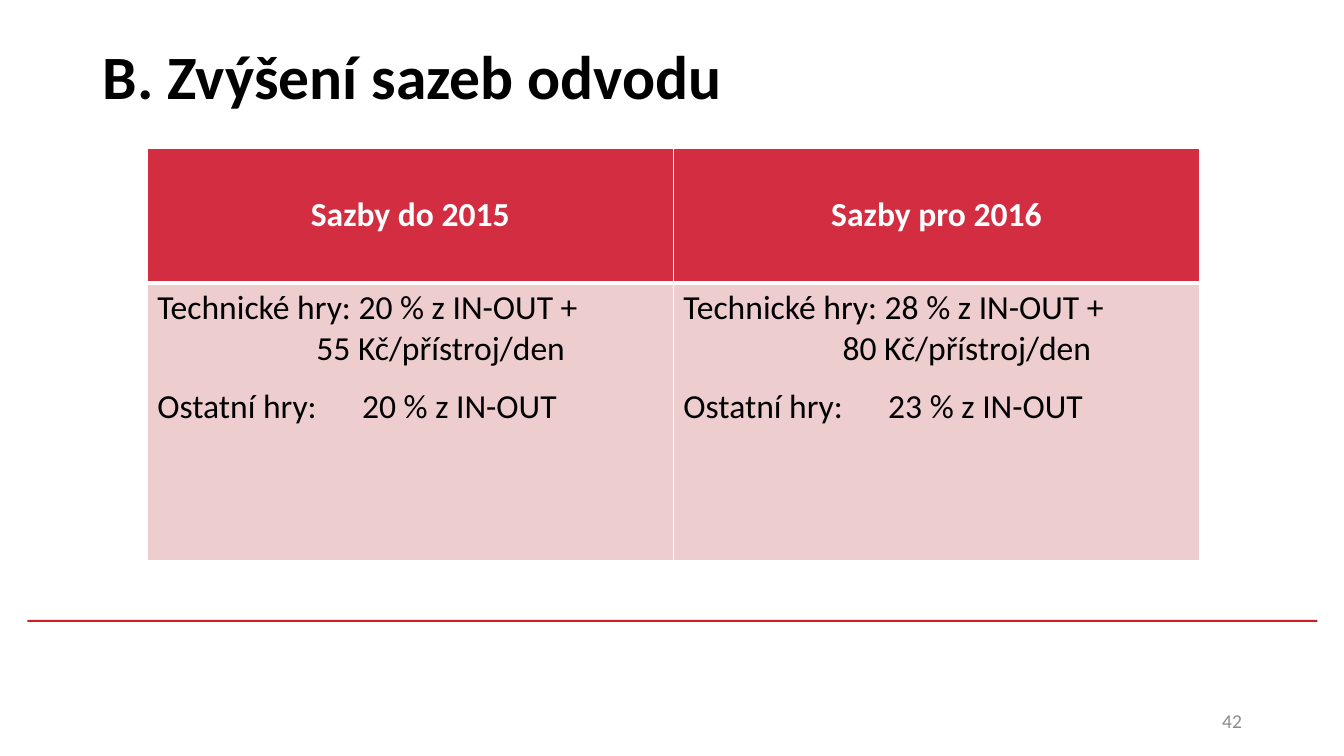
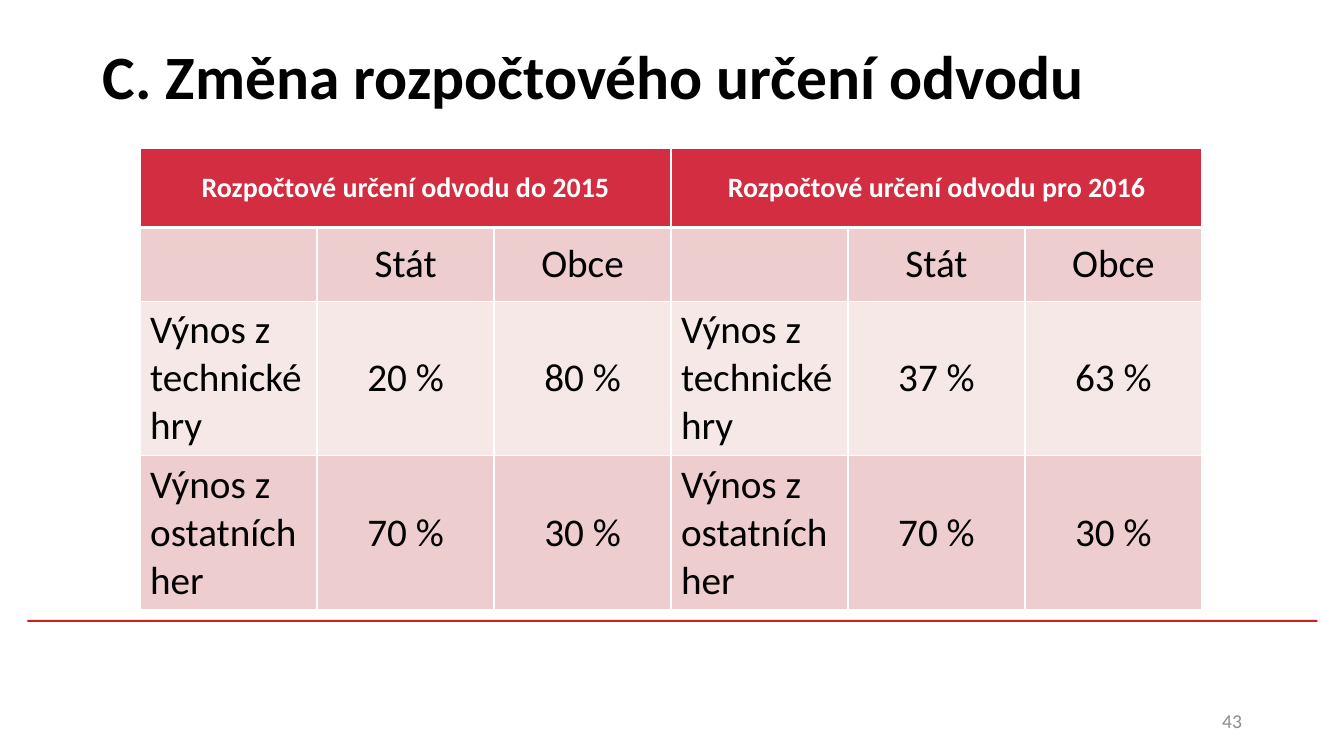
from dataclasses import dataclass

from lxml import etree
from pptx import Presentation
from pptx.dml.color import RGBColor
from pptx.enum.shapes import MSO_SHAPE
from pptx.enum.text import MSO_ANCHOR, PP_ALIGN
from pptx.oxml.ns import qn
from pptx.util import Cm, Pt

RECT = MSO_SHAPE.RECTANGLE
TOP, MIDDLE = MSO_ANCHOR.TOP, MSO_ANCHOR.MIDDLE
LEFT, CENTER, RIGHT = PP_ALIGN.LEFT, PP_ALIGN.CENTER, PP_ALIGN.RIGHT


@dataclass(frozen=True)
class Theme:
    font: str = "Calibri"
    text: str = "000000"
    white: str = "FFFFFF"
    muted: str = "8C8C8C"
    rule: str = "CD1F21"
    header: str = "D22D40"
    bands: tuple[str, str] = ("EECDCF", "F7E8E8")
    title_size: int = 44
    page_size: int = 14
    thin: int = 1
    thick: int = 3


@dataclass(frozen=True)
class RateTable:
    left: float
    col_width: float
    row_heights: list[float]
    headings: list[str]
    rows: list[list[str]]
    head_size: int
    body_size: int
    listing: bool = False  # body cells hold terms with hanging values


@dataclass(frozen=True)
class Page:
    number: int
    title: str
    table: RateTable


THEME = Theme()
TABLE_TOP = 3.73
HANG, VALUE_TAB = 4.01, 5.16

PAGES = [
    Page(42, "B. Zvýšení sazeb odvodu", RateTable(
        3.71, 13.26, [3.4, 6.99],
        ["Sazby do 2015", "Sazby pro 2016"],
        [[f"Technické hry: {tech} % z IN-OUT +\v{fee} Kč/přístroj/den\n"
          f"Ostatní hry:\t{other} % z IN-OUT"
          for tech, fee, other in ((20, 55, 20), (28, 80, 23))]],
        24, 24, listing=True)),
    Page(43, "C. Změna rozpočtového určení odvodu", RateTable(
        3.53, 4.46, [2, 1.86, 3.89, 3.89],
        ["Rozpočtové určení odvodu do 2015", "Rozpočtové určení odvodu pro 2016"],
        [["", "Stát", "Obce"] * 2,
         ["Výnos z technické hry", "20 %", "80 %",
          "Výnos z technické hry", "37 %", "63 %"],
         ["Výnos z ostatních her", "70 %", "30 %"] * 2],
        20, 28)),
]


def rgb(color: str) -> RGBColor:
    return RGBColor.from_string(color)


def style_text(tf, size: int, color: str, bold: bool = False, align=LEFT) -> None:
    for p in tf.paragraphs:
        p.alignment = align
        for r in p.runs:
            r.font.name, r.font.size, r.font.bold = THEME.font, Pt(size), bold
            r.font.color.rgb = rgb(color)


def add_text(s, box: tuple, text: str, size: int, color: str,
             bold: bool = False, align=LEFT) -> None:
    tf = s.shapes.add_textbox(*map(Cm, box)).text_frame
    tf.word_wrap, tf.vertical_anchor = True, MIDDLE
    tf.text = text
    style_text(tf, size, color, bold, align)


def add_frame(s, page: Page) -> None:
    """Rule, title and page number shared by all slides."""
    rule = s.shapes.add_shape(RECT, Cm(0.69), Cm(15.62), Cm(32.51), Cm(0.05))
    rule.shadow.inherit = False
    rule.fill.solid()
    rule.fill.fore_color.rgb = rgb(THEME.rule)
    rule.line.fill.background()
    add_text(s, (2.34, 0.05, 29.21, 3.68), page.title,
             THEME.title_size, THEME.text, bold=True)
    add_text(s, (23.93, 17.65, 7.62, 1.02), str(page.number),
             THEME.page_size, THEME.muted, align=RIGHT)


def paint_cell(cell, color: str, top: int, bottom: int) -> None:
    tcPr = cell._tc.get_or_add_tcPr()
    widths = {"L": THEME.thin, "R": THEME.thin, "T": top, "B": bottom}
    for side, width in widths.items():
        ln = etree.SubElement(tcPr, qn(f"a:ln{side}"), w=str(Pt(width)))
        fill = etree.SubElement(ln, qn("a:solidFill"))
        etree.SubElement(fill, qn("a:srgbClr"), val=THEME.white)
    cell.fill.solid()
    cell.fill.fore_color.rgb = rgb(color)


def hang_values(tf) -> None:
    """Indent the broken line of the first term, tab the value of the second."""
    first, second = tf.paragraphs
    first.space_after = Pt(12)
    pPr = first._p.get_or_add_pPr()
    pPr.set("marL", str(Cm(HANG)))
    pPr.set("indent", str(-Cm(HANG)))
    tabs = etree.SubElement(second._p.get_or_add_pPr(), qn("a:tabLst"))
    etree.SubElement(tabs, qn("a:tab"), pos=str(Cm(VALUE_TAB)), algn="l")


def add_rate_table(s, spec: RateTable) -> None:
    n_cols = len(spec.rows[0])
    span = n_cols // len(spec.headings)
    table = s.shapes.add_table(
        len(spec.row_heights), n_cols, Cm(spec.left), Cm(TABLE_TOP),
        Cm(spec.col_width * n_cols), Cm(sum(spec.row_heights))).table
    for col in table.columns:
        col.width = Cm(spec.col_width)
    for row, height in zip(table.rows, spec.row_heights):
        row.height = Cm(height)

    # Header row
    for i in range(n_cols):
        paint_cell(table.cell(0, i), THEME.header, THEME.thin, THEME.thick)
    for i, heading in enumerate(spec.headings):
        cell = table.cell(0, i * span)
        if span > 1:
            cell.merge(table.cell(0, (i + 1) * span - 1))
        cell.vertical_anchor = MIDDLE
        cell.text_frame.text = heading
        style_text(cell.text_frame, spec.head_size, THEME.white, True, CENTER)

    # Body rows
    for i, texts in enumerate(spec.rows):
        top = THEME.thin if i else THEME.thick
        for j, text in enumerate(texts):
            cell = table.cell(i + 1, j)
            paint_cell(cell, THEME.bands[i % 2], top, THEME.thin)
            cell.vertical_anchor = TOP if spec.listing else MIDDLE
            tf = cell.text_frame
            tf.text = text
            align = CENTER if j % span else LEFT
            style_text(tf, spec.body_size, THEME.text, align=align)
            if spec.listing:
                hang_values(tf)


def main() -> None:
    prs = Presentation()
    prs.slide_width, prs.slide_height = Cm(33.87), Cm(19.05)
    blank = prs.slide_layouts[6]
    for page in PAGES:
        s = prs.slides.add_slide(blank)
        add_frame(s, page)
        add_rate_table(s, page.table)
    prs.save("out.pptx")


if __name__ == "__main__":
    main()
